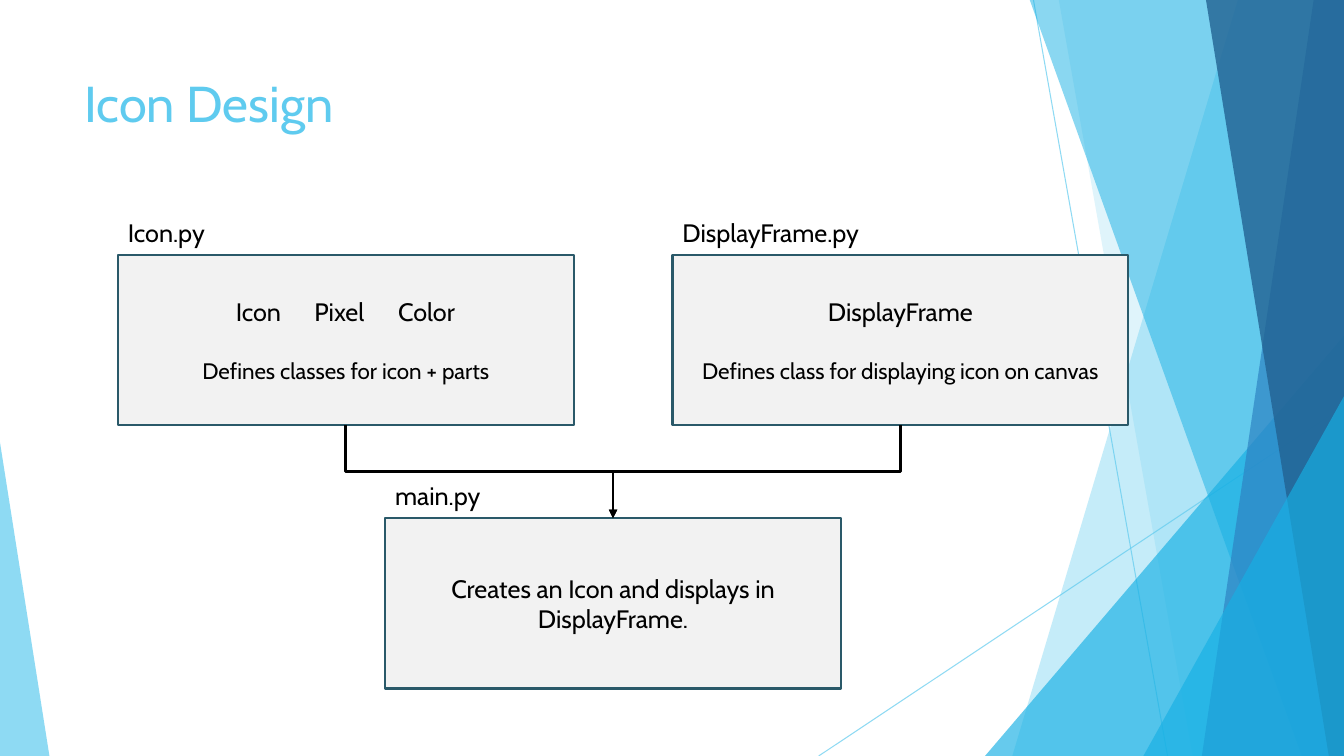
from dataclasses import dataclass

from lxml import etree
from pptx import Presentation
from pptx.dml.color import RGBColor
from pptx.enum.shapes import MSO_CONNECTOR, MSO_SHAPE
from pptx.enum.text import MSO_ANCHOR, PP_ALIGN
from pptx.oxml.ns import qn
from pptx.util import Pt

PX = 9144  # EMU in one px, 100 px to the inch
WIDE, HIGH = 1333, 750
BOX_W, BOX_H = 452, 169
FONT = "Cabin"
TABS = (107, 185, 268)

STRAIGHT, ELBOW = MSO_CONNECTOR.STRAIGHT, MSO_CONNECTOR.ELBOW
RECT, PEAK = MSO_SHAPE.RECTANGLE, MSO_SHAPE.ISOSCELES_TRIANGLE
LEFT, CENTER = PP_ALIGN.LEFT, PP_ALIGN.CENTER
MIDDLE = MSO_ANCHOR.MIDDLE

SKY = RGBColor(0x5F, 0xCB, 0xEF)
CYAN = RGBColor(0x17, 0xB0, 0xE4)
BLUE = RGBColor(0x2E, 0x83, 0xC3)
NAVY = RGBColor(0x22, 0x62, 0x92)
PALE = RGBColor(0xF2, 0xF2, 0xF2)
TEAL = RGBColor(0x2A, 0x59, 0x69)
BLACK = RGBColor(0, 0, 0)


@dataclass
class Band:
    """A full-height strip whose slanted left edge runs from top to foot."""
    top: int
    foot: int
    color: RGBColor
    alpha: int


@dataclass
class Wedge:
    """A triangle on the foot of the slide; tip is 0 (left) or 1 (right)."""
    x: int
    y: int
    w: int
    tip: int
    color: RGBColor
    alpha: int


@dataclass
class Line:
    text: str
    size: int = 18
    gap: int = 0


@dataclass
class Module:
    """A box with its file name above it; name_w is the name's width."""
    name: str
    name_w: int
    x: int
    y: int
    lines: list[Line]


RAYS = [(1025, 0, 1158, HIGH), (WIDE, 403, 812, HIGH)]
FACETS = [
    Band(1228, 1004, SKY, 36),
    Band(1050, 1183, SKY, 20),
    Wedge(977, 333, 356, 1, CYAN, 66),
    Band(1021, 1291, CYAN, 50),
    Band(1303, 1192, BLUE, 70),
    Band(1196, 1318, NAVY, 80),
    Wedge(1134, 393, 199, 1, CYAN, 66),
    Wedge(0, 439, 49, 0, SKY, 70),
]
ICON = Module("Icon.py", 103, 117, 253, [
    Line("\tIcon\tPixel\tColor"),
    Line("Defines classes for icon + parts", 16, 22)])
FRAME = Module("DisplayFrame.py", 207, 667, 253, [
    Line("DisplayFrame"),
    Line("Defines class for displaying icon on canvas", 16, 22)])
MAIN = Module("main.py", 111, 382, 514, [
    Line("Creates an Icon and displays in DisplayFrame.")])


def fade(fill, alpha: int) -> None:
    """Make a solid fill or line colour see-through; alpha is in percent."""
    color = fill._xPr.find(".//" + qn("a:srgbClr"))
    etree.SubElement(color, qn("a:alpha"), val=str(alpha * 1000))


def paint(shape, color: RGBColor) -> None:
    shape.shadow.inherit = False
    shape.fill.solid()
    shape.fill.fore_color.rgb = color


def style(para, size: int, color: RGBColor) -> None:
    para.font.name = FONT
    para.font.size = Pt(size)
    para.font.color.rgb = color


def add_line(shapes, kind, ends: tuple, color: RGBColor, width: float):
    line = shapes.add_connector(kind, *(round(n * PX) for n in ends))
    line.line.color.rgb = color
    line.line.width = Pt(width)
    etree.SubElement(line._element.spPr, qn("a:effectLst"))
    return line


def add_facet(shapes, facet: Band | Wedge) -> None:
    if isinstance(facet, Band):
        pen = shapes.build_freeform(facet.top, -1, scale=PX)
        pen.add_line_segments(
            [(WIDE, -1), (WIDE, HIGH), (facet.foot, HIGH)])
        shape = pen.convert_to_shape()
    else:
        shape = shapes.add_shape(PEAK, facet.x * PX, facet.y * PX,
                                 facet.w * PX, (HIGH - facet.y) * PX)
        shape.adjustments[0] = facet.tip
    paint(shape, facet.color)
    fade(shape.fill, facet.alpha)
    shape.line.fill.background()


def add_label(shapes, text: str, place: tuple, size: int,
              color: RGBColor, wrap: bool) -> None:
    box = shapes.add_textbox(*(n * PX for n in place))
    box.text_frame.word_wrap = wrap
    para = box.text_frame.paragraphs[0]
    para.text = text
    style(para, size, color)


def set_tabs(para) -> None:
    stops = etree.SubElement(para._p.get_or_add_pPr(), qn("a:tabLst"))
    for stop in TABS:
        etree.SubElement(stops, qn("a:tab"), pos=str(stop * PX), algn="l")


def add_module(shapes, mod: Module) -> None:
    box = shapes.add_shape(RECT, mod.x * PX, mod.y * PX,
                           BOX_W * PX, BOX_H * PX)
    paint(box, PALE)
    box.line.color.rgb = TEAL
    box.line.width = Pt(1.5)
    frame = box.text_frame
    frame.word_wrap = True
    frame.vertical_anchor = MIDDLE
    for i, line in enumerate(mod.lines):
        para = frame.add_paragraph() if i else frame.paragraphs[0]
        para.text = line.text
        para.space_before = Pt(line.gap)
        style(para, line.size, BLACK)
        if "\t" in line.text:
            para.alignment = LEFT
            set_tabs(para)
        else:
            para.alignment = CENTER
    add_label(shapes, mod.name, (mod.x, mod.y - 42, mod.name_w, 40),
              18, BLACK, False)


def add_link(shapes, src: Module, dst: Module) -> None:
    """Join the foot of src to the top of dst with a turned elbow arrow."""
    x1, y1 = src.x + BOX_W / 2, src.y + BOX_H
    x2, y2 = dst.x + BOX_W / 2, dst.y
    mid_x, mid_y = (x1 + x2) / 2, (y1 + y2) / 2
    half_w, half_h = (y2 - y1) / 2, abs(x2 - x1) / 2
    right = x2 > x1
    if right:
        half_w = -half_w  # starts on the right, so the elbow is flipped
    ends = (mid_x - half_w, mid_y - half_h, mid_x + half_w, mid_y + half_h)
    link = add_line(shapes, ELBOW, ends, BLACK, 2)
    link._element.spPr.xfrm.set("rot", str((270 if right else 90) * 60000))
    etree.SubElement(link.line._get_or_add_ln(), qn("a:tailEnd"),
                     type="triangle")


def main() -> None:
    prs = Presentation()
    prs.slide_width, prs.slide_height = WIDE * PX, HIGH * PX
    shapes = prs.slides.add_slide(prs.slide_layouts[6]).shapes
    for ends in RAYS:
        ray = add_line(shapes, STRAIGHT, ends, SKY, 0.75)
        fade(ray.line.fill, 70)
    for facet in FACETS:
        add_facet(shapes, facet)
    add_label(shapes, "Icon Design", (74, 67, 940, 144), 36, SKY, True)
    for mod in (ICON, FRAME, MAIN):
        add_module(shapes, mod)
    for src in (ICON, FRAME):
        add_link(shapes, src, MAIN)
    prs.save("out.pptx")


if __name__ == "__main__":
    main()
